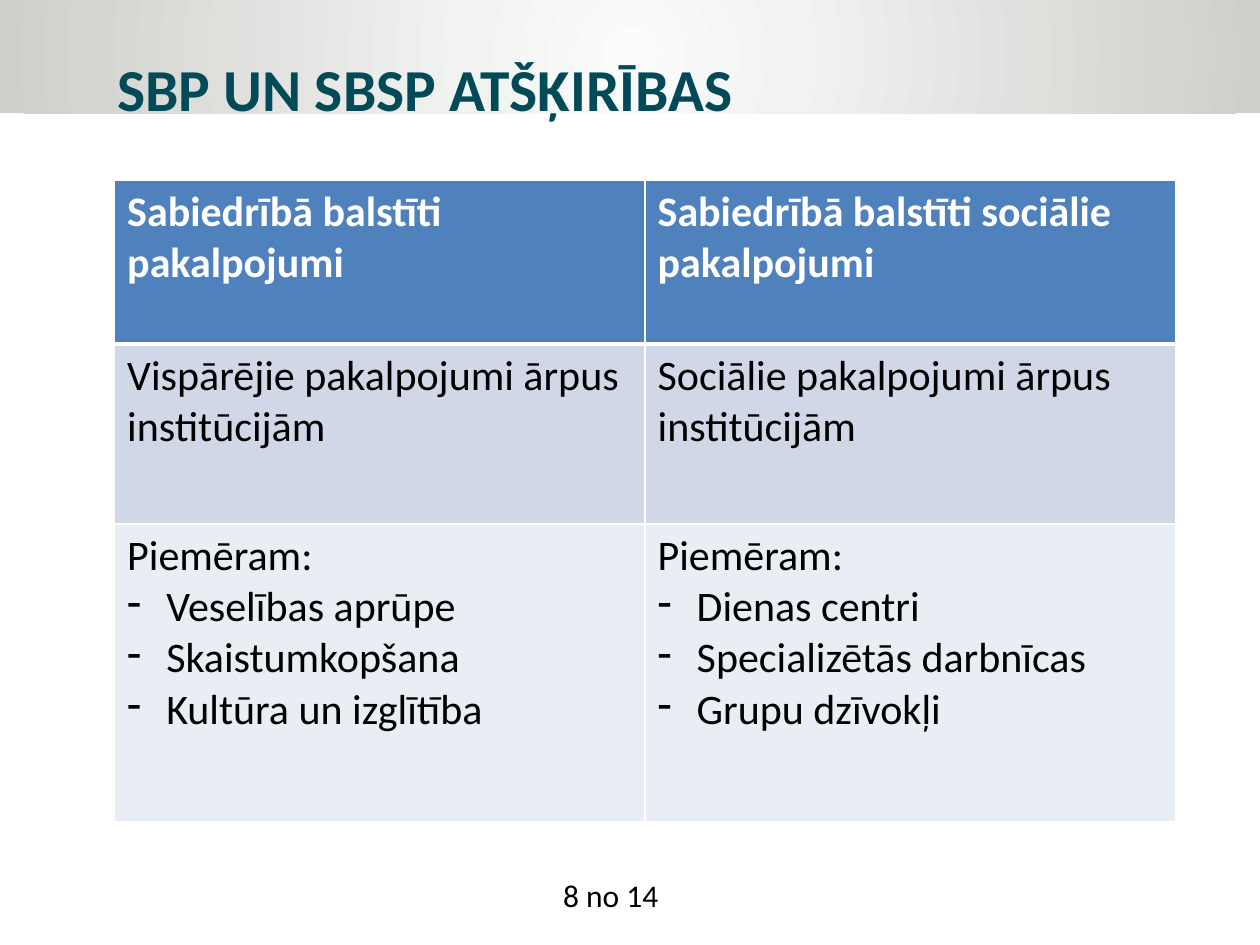
from dataclasses import dataclass

from lxml import etree
from pptx import Presentation
from pptx import util as u
from pptx.dml.color import RGBColor
from pptx.enum import shapes, text
from pptx.oxml import ns, parse_xml


@dataclass(frozen=True)
class Theme:
    font: str = "Calibri"
    title_size: int = 34
    table_size: int = 24
    page_size: int = 18
    title: str = "034A58"
    white: str = "FFFFFF"
    black: str = "000000"
    row_fills: tuple = ("4F81BD", "D0D8E8", "E9EDF4")
    band_stops: tuple = ((0, "FBFCFC"), (26, "F1F3F1"), (100, "CECECA"))


HEADINGS = ["Sabiedrībā balstīti pakalpojumi", "Sabiedrībā balstīti sociālie pakalpojumi"]
DESCRIPTIONS = [
    "Vispārējie pakalpojumi ārpus institūcijām",
    "Sociālie pakalpojumi ārpus institūcijām",
]
EXAMPLES = [
    ["Veselības aprūpe", "Skaistumkopšana", "Kultūra un izglītība"],
    ["Dienas centri", "Specializētās darbnīcas", "Grupu dzīvokļi"],
]


class SlideBuilder:
    def __init__(self, slide, theme):
        self.slide = slide
        self.theme = theme

    def add_text(self, paragraph, content, size, color, bold=False):
        run = paragraph.add_run()
        run.text = content
        values = {"name": self.theme.font, "size": u.Pt(size), "bold": bold}
        for name, value in values.items():
            setattr(run.font, name, value)
        run.font.color.rgb = RGBColor.from_string(color)
        paragraph.alignment = text.PP_ALIGN.LEFT

    def fill_frame(self, frame, content, size, color, bold=False):
        values = {
            "word_wrap": True,
            "auto_size": text.MSO_AUTO_SIZE.SHAPE_TO_FIT_TEXT,
            "vertical_anchor": text.MSO_ANCHOR.TOP,
        }
        for name, value in values.items():
            setattr(frame, name, value)
        self.add_text(frame.paragraphs[0], content, size, color, bold)

    def band(self, left, top, width, height):
        shape = self.slide.shapes.add_shape(
            shapes.MSO_SHAPE.RECTANGLE, *map(u.Inches, (left, top, width, height))
        )
        shape.shadow.inherit = False
        shape.line.fill.background()
        stops = "".join(
            f'<a:gs pos="{position * 1000}"><a:srgbClr val="{color}"/></a:gs>'
            for position, color in self.theme.band_stops
        )
        gradient = parse_xml(
            f'<a:gradFill {ns.nsdecls("a")} rotWithShape="1"><a:gsLst>{stops}</a:gsLst>'
            '<a:path path="circle"><a:fillToRect l="50000" t="50000" r="50000" b="50000"/>'
            "</a:path></a:gradFill>"
        )
        shape.element.spPr.find(ns.qn("a:prstGeom")).addnext(gradient)
        self.slide.shapes.title.element.addprevious(shape.element)

    def title(self, content, left, top, width, height):
        shape = self.slide.shapes.title
        values = {"left": left, "top": top, "width": width, "height": height}
        for name, value in values.items():
            setattr(shape, name, u.Inches(value))
        self.fill_frame(
            shape.text_frame, content, self.theme.title_size, self.theme.title, True
        )

    def page_label(self, content, left, top, width, height):
        shape = self.slide.shapes.add_textbox(*map(u.Inches, (left, top, width, height)))
        self.fill_frame(shape.text_frame, content, self.theme.page_size, self.theme.black)

    def cell_borders(self, cell, widths):
        properties = cell._tc.get_or_add_tcPr()
        for side, width in widths.items():
            line = etree.SubElement(properties, ns.qn(f"a:ln{side}"), w=str(u.Pt(width)))
            solid = etree.SubElement(line, ns.qn("a:solidFill"))
            etree.SubElement(solid, ns.qn("a:srgbClr"), val=self.theme.white)

    def bullet(self, paragraph):
        properties = paragraph._p.get_or_add_pPr()
        indent = u.Inches(0.31)
        properties.set("marL", str(indent))
        properties.set("indent", str(-indent))
        etree.SubElement(properties, ns.qn("a:buChar"), char="-")

    def table(self, rows, left, top, column_width, row_heights):
        columns = len(rows[0])
        size = (left, top, column_width * columns, sum(row_heights))
        table = self.slide.shapes.add_table(len(rows), columns, *map(u.Inches, size)).table
        for column in table.columns:
            column.width = u.Inches(column_width)
        for index, height in enumerate(row_heights):
            table.rows[index].height = u.Inches(height)
            header = index == 0
            color = self.theme.white if header else self.theme.black
            borders = {"L": 1, "R": 1, "T": 3 if index == 1 else 1, "B": 3 if header else 1}
            for cell, (lead, *items) in zip(table.rows[index].cells, rows[index]):
                self.cell_borders(cell, borders)
                cell.fill.solid()
                cell.fill.fore_color.rgb = RGBColor.from_string(self.theme.row_fills[index])
                frame = cell.text_frame
                self.add_text(frame.paragraphs[0], lead, self.theme.table_size, color, header)
                for item in items:
                    paragraph = frame.add_paragraph()
                    self.add_text(paragraph, item, self.theme.table_size, color)
                    self.bullet(paragraph)


def main():
    presentation = Presentation()
    presentation.slide_width = u.Inches(10)
    presentation.slide_height = u.Inches(7.5)
    slide = presentation.slides.add_slide(presentation.slide_layouts[5])
    builder = SlideBuilder(slide, Theme())
    builder.band(0, -0.03, 10, 0.93)
    builder.title("SBP UN SBSP ATŠĶIRĪBAS", 0.83, 0.36, 7.09, 0.67)
    builder.page_label("8 no 14", 4.37, 6.9, 1.89, 0.4)
    rows = [
        [[heading] for heading in HEADINGS],
        [[description] for description in DESCRIPTIONS],
        [["Piemēram:", *examples] for examples in EXAMPLES],
    ]
    builder.table(rows, 0.91, 1.43, 4.21, [1.3, 1.43, 2.36])
    presentation.save("out.pptx")


if __name__ == "__main__":
    main()
